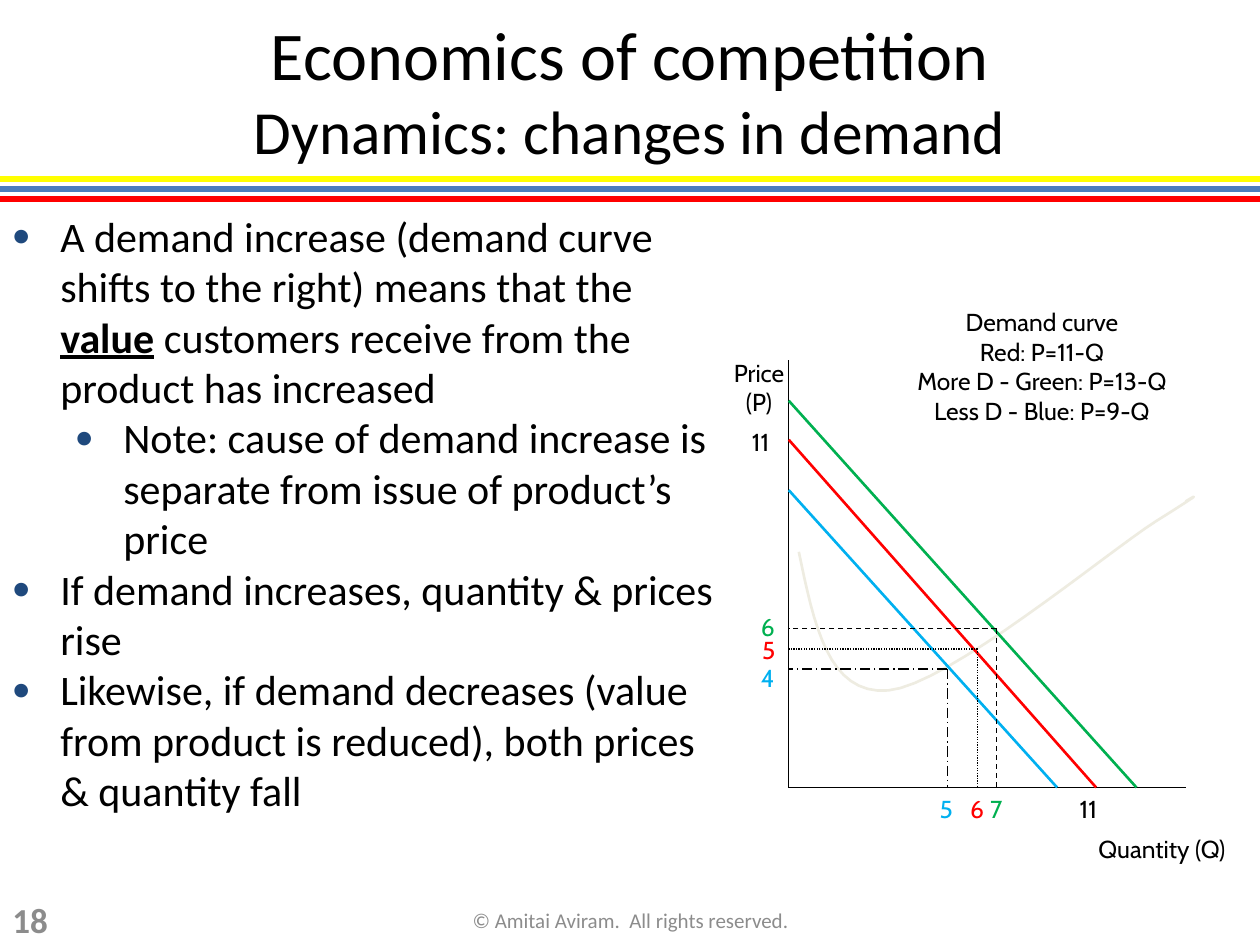
from dataclasses import dataclass

from lxml.etree import SubElement
from pptx import Presentation
from pptx.dml.color import RGBColor
from pptx.enum.dml import MSO_LINE_DASH_STYLE as Dash
from pptx.enum.shapes import MSO_CONNECTOR
from pptx.enum.text import MSO_ANCHOR as Anchor, PP_ALIGN as Align
from pptx.oxml.ns import qn
from pptx.util import Inches, Pt


@dataclass(frozen=True)
class Theme:
    text_font: str = "Calibri"
    chart_font: str = "Cabin"
    black: str = "000000"
    gray: str = "8C8C8C"
    red: str = "FF0000"
    green: str = "00B050"
    blue: str = "00B0F0"
    cream: str = "EEECE1"
    bullet: str = "1F497D"
    rule_yellow: str = "FFFF00"
    rule_blue: str = "4B7EBC"
    title_size: float = 39
    subtitle_size: float = 35
    body_size: float = 24
    number_size: float = 20
    label_size: float = 14
    footer_size: float = 12
    thin: float = 0.75
    curve: float = 1.5
    rule: float = 3


THEME = Theme()


class SlideBuilder:
    def __init__(self, slide, theme):
        self.slide = slide
        self.theme = theme

    def line(self, start, end, color, width, dash=None):
        connector = self.slide.shapes.add_connector(
            MSO_CONNECTOR.STRAIGHT, *(Inches(value) for value in (*start, *end)))
        connector.line.color.rgb = RGBColor.from_string(color)
        connector.line.width = Pt(width)
        if dash is not None:
            connector.line.dash_style = dash
        SubElement(connector._element.spPr, qn("a:effectLst"))

    def text_box(self, left, top, width, height, anchor=Anchor.TOP):
        box = self.slide.shapes.add_textbox(
            Inches(left), Inches(top), Inches(width), Inches(height))
        frame = box.text_frame
        frame.word_wrap = True
        frame.vertical_anchor = anchor
        return frame

    def run(self, paragraph, text, size, color, font=None, strong=False, underline=False):
        run = paragraph.add_run()
        run.text = text
        run.font.name = font or self.theme.text_font
        run.font.size = Pt(size)
        run.font.bold = strong
        run.font.underline = underline
        run.font.color.rgb = RGBColor.from_string(color)

    def title(self, heading, subheading):
        paragraph = self.text_box(0, 0, 10, 1.42, Anchor.MIDDLE).paragraphs[0]
        paragraph.alignment = Align.CENTER
        self.run(paragraph, heading, self.theme.title_size, self.theme.black)
        paragraph.add_line_break()
        self.run(paragraph, subheading, self.theme.subtitle_size, self.theme.black)

    def label(self, lines, left, top, width, height=0.33, color=None, align=Align.LEFT):
        paragraph = self.text_box(left, top, width, height).paragraphs[0]
        paragraph.alignment = align
        for index, text in enumerate(lines):
            if index:
                paragraph.add_line_break()
            self.run(paragraph, text, self.theme.label_size,
                     color or self.theme.black, self.theme.chart_font)

    def bullets(self, items, left, top, width, height):
        """Each item is a level and a list of (text, emphasised) pairs."""
        frame = self.text_box(left, top, width, height)
        for index, (level, pieces) in enumerate(items):
            paragraph = frame.add_paragraph() if index else frame.paragraphs[0]
            paragraph.level = level
            self.add_bullet(paragraph, 0.38 + 0.5 * level, 0.38)
            for text, emphasised in pieces:
                self.run(paragraph, text, self.theme.body_size, self.theme.black,
                         strong=emphasised, underline=emphasised)

    def add_bullet(self, paragraph, margin, hanging):
        properties = paragraph._p.get_or_add_pPr()
        properties.set("marL", str(Inches(margin)))
        properties.set("indent", str(-Inches(hanging)))
        color = SubElement(properties, qn("a:buClr"))
        SubElement(color, qn("a:srgbClr"), val=self.theme.bullet)
        SubElement(properties, qn("a:buSzPct"), val="70000")
        SubElement(properties, qn("a:buFont"), typeface=self.theme.text_font)
        SubElement(properties, qn("a:buChar"), char="●")

    def footer(self, text, left, width, size, align, strong=False):
        paragraph = self.text_box(left, 7.1, width, 0.4, Anchor.MIDDLE).paragraphs[0]
        paragraph.alignment = align
        self.run(paragraph, text, size, self.theme.gray, strong=strong)

    def smooth_curve(self, start, segments, color, width, steps=16):
        """Draw joined cubic Bézier segments, each given as three points."""
        points = []
        previous = start
        for control_1, control_2, end in segments:
            for step in range(1, steps + 1):
                t = step / steps
                weights = ((1 - t) ** 3, 3 * t * (1 - t) ** 2, 3 * t * t * (1 - t), t ** 3)
                corners = (previous, control_1, control_2, end)
                points.append(tuple(
                    Inches(sum(w * corner[axis] for w, corner in zip(weights, corners)))
                    for axis in (0, 1)))
            previous = end
        builder = self.slide.shapes.build_freeform(Inches(start[0]), Inches(start[1]))
        builder.add_line_segments(points, close=False)
        shape = builder.convert_to_shape()
        shape.shadow.inherit = False
        shape.fill.background()
        shape.line.color.rgb = RGBColor.from_string(color)
        shape.line.width = Pt(width)


def draw_demand_chart(builder):
    theme = builder.theme
    axis_x, axis_top, axis_y, axis_right = 6.26, 2.86, 6.25, 9.41

    builder.line((axis_x, axis_top), (axis_x, axis_y), theme.black, theme.thin)
    builder.line((axis_x, axis_y), (axis_right, axis_y), theme.black, theme.thin)
    builder.smooth_curve(
        (6.34, 4.38),
        [((6.46, 4.95), (6.57, 5.52), (7.05, 5.48)),
         ((7.52, 5.44), (8.78, 4.39), (9.17, 4.14)),
         ((9.57, 3.89), (9.49, 3.93), (9.41, 3.98))],
        theme.cream, theme.curve)

    # colour, price intercept, quantity intercept
    for color, top, right in ((theme.red, 3.49, 8.7), (theme.green, 3.18, 9.02),
                              (theme.blue, 3.89, 8.39)):
        builder.line((axis_x, top), (right, axis_y), color, theme.curve)

    # colour, dash, equilibrium point, (price, left, top), (quantity, left, width)
    equilibria = (
        (theme.red, Dash.ROUND_DOT, (7.76, 5.15), ("5", 5.95, 4.99), ("6", 7.6, 0.39)),
        (theme.green, Dash.DASH, (7.91, 4.99), ("6", 5.94, 4.81), ("7", 7.76, 0.39)),
        (theme.blue, Dash.LONG_DASH_DOT, (7.52, 5.31), ("4", 5.94, 5.21), ("5", 7.36, 0.24)),
    )
    for color, dash, point, (price, left, top), (quantity, x, width) in equilibria:
        builder.line(point, (point[0], axis_y), theme.black, theme.thin, dash)
        builder.line(point, (axis_x, point[1]), theme.black, theme.thin, dash)
        builder.label([price], left, top, 0.32, color=color)
        builder.label([quantity], x, axis_y, width, color=color)

    builder.label(["Price (P)"], 5.71, 2.79, 0.63, 0.57, align=Align.CENTER)
    builder.label(["Quantity (Q)"], 8.62, 6.57, 1.34)
    builder.label(["11"], 5.87, 3.34, 0.47)
    builder.label(["11"], 8.47, axis_y, 0.47)
    builder.label(["Demand curve", "Red: P=11-Q", "More D - Green: P=13-Q",
                   "Less D - Blue: P=9-Q"], 7.05, 2.39, 2.44, 1.04, align=Align.CENTER)


def main():
    presentation = Presentation()
    presentation.slide_width, presentation.slide_height = Inches(10), Inches(7.5)
    slide = presentation.slides.add_slide(presentation.slide_layouts[6])
    builder = SlideBuilder(slide, THEME)

    for index, color in enumerate((THEME.rule_yellow, THEME.rule_blue, THEME.red)):
        y = 1.42 + 0.08 * index
        builder.line((0, y), (10, y), color, THEME.rule)
    builder.title("Economics of competition", "Dynamics: changes in demand")
    draw_demand_chart(builder)
    builder.bullets([
        (0, [("A demand increase (demand curve shifts to the right) means that the ", False),
             ("value", True),
             (" customers receive from the product has increased", False)]),
        (1, [("Note: cause of demand increase is separate from issue of product’s price", False)]),
        (0, [("If demand increases, quantity & prices rise", False)]),
        (0, [("Likewise, if demand decreases (value from product is reduced), "
              "both prices & quantity fall", False)]),
    ], 0, 1.62, 5.79, 5.63)
    builder.footer("© Amitai Aviram.  All rights reserved.", 3.42, 3.17,
                   THEME.footer_size, Align.CENTER)
    builder.footer("18", 0, 0.67, THEME.number_size, Align.JUSTIFY, strong=True)
    presentation.save("out.pptx")


if __name__ == "__main__":
    main()
